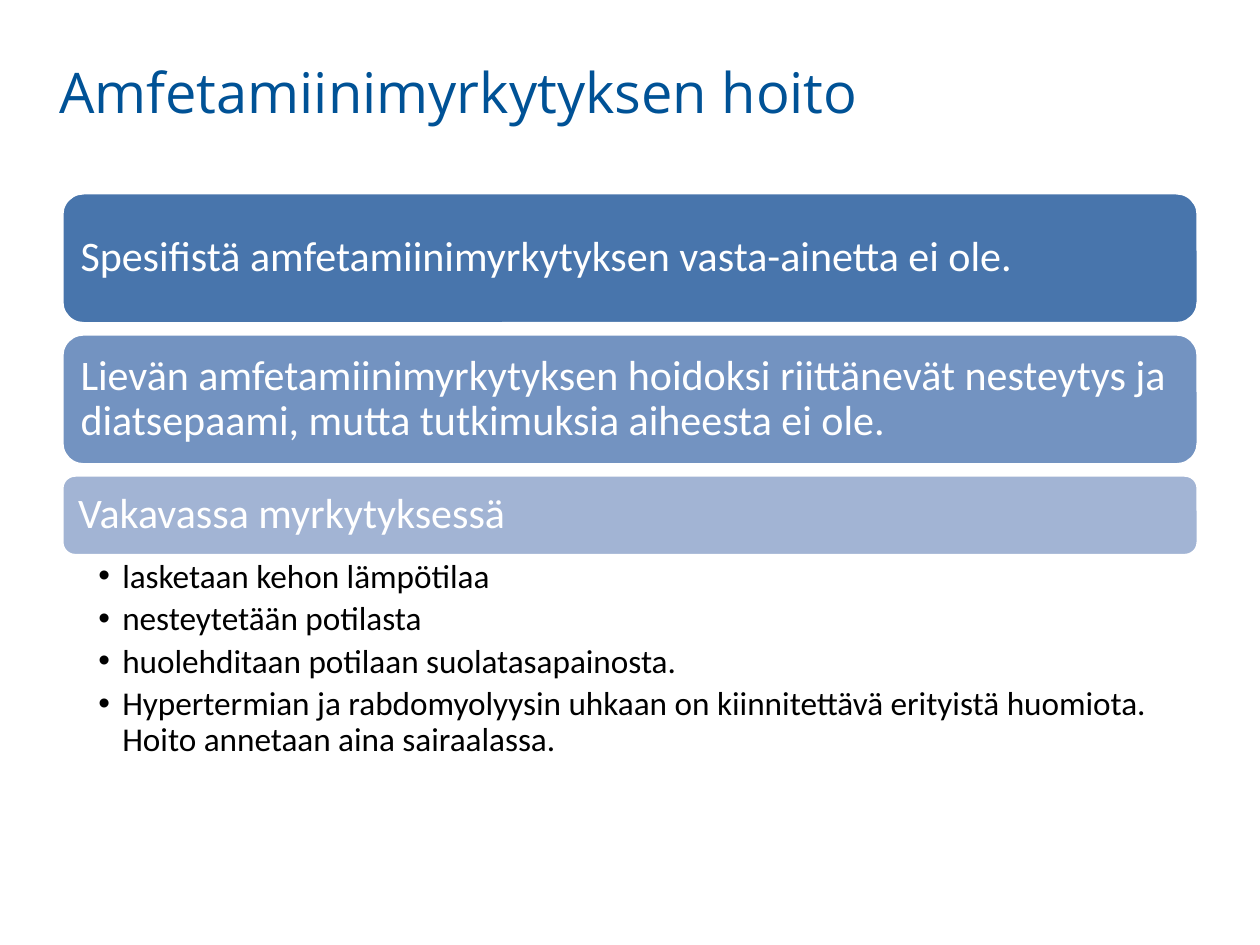
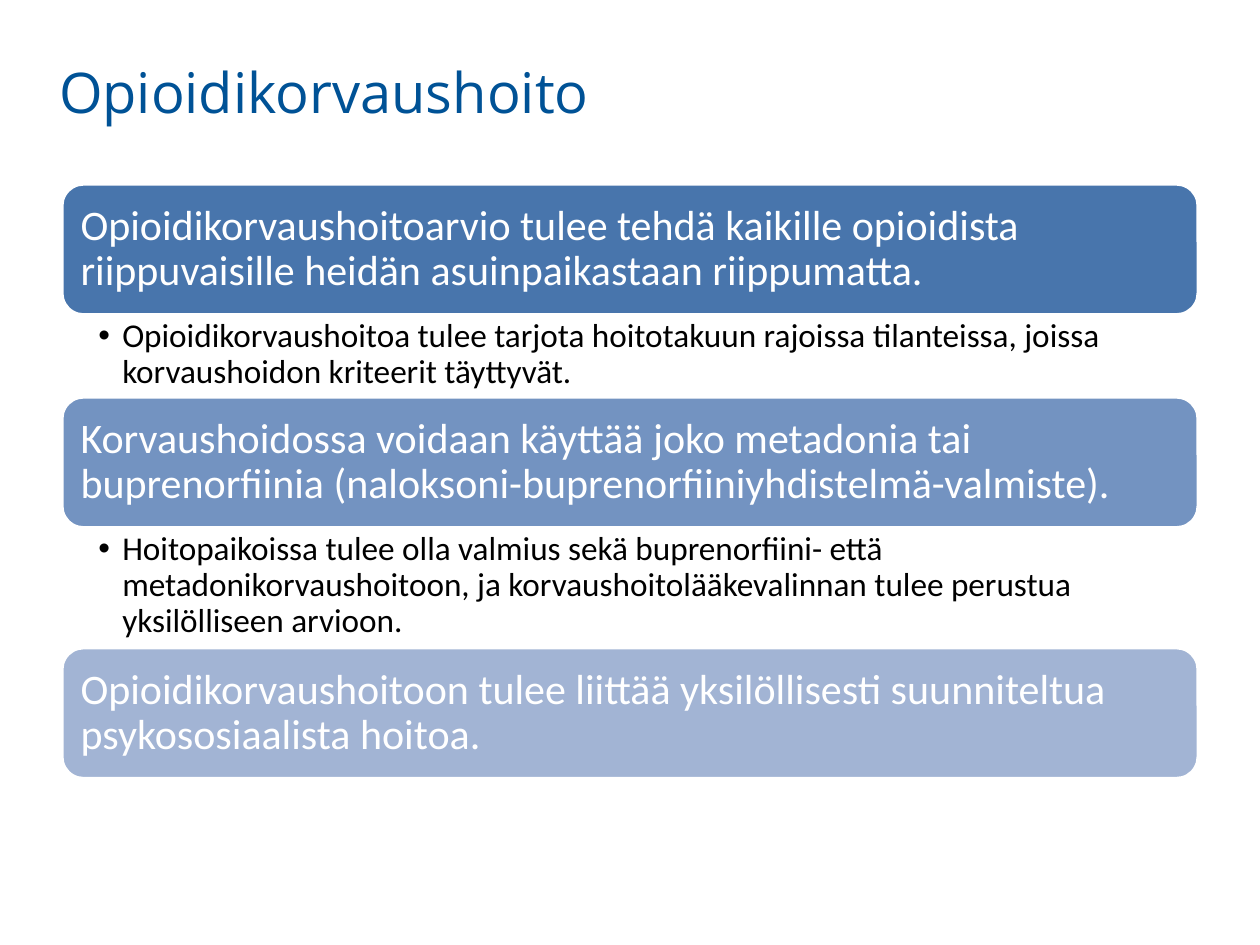
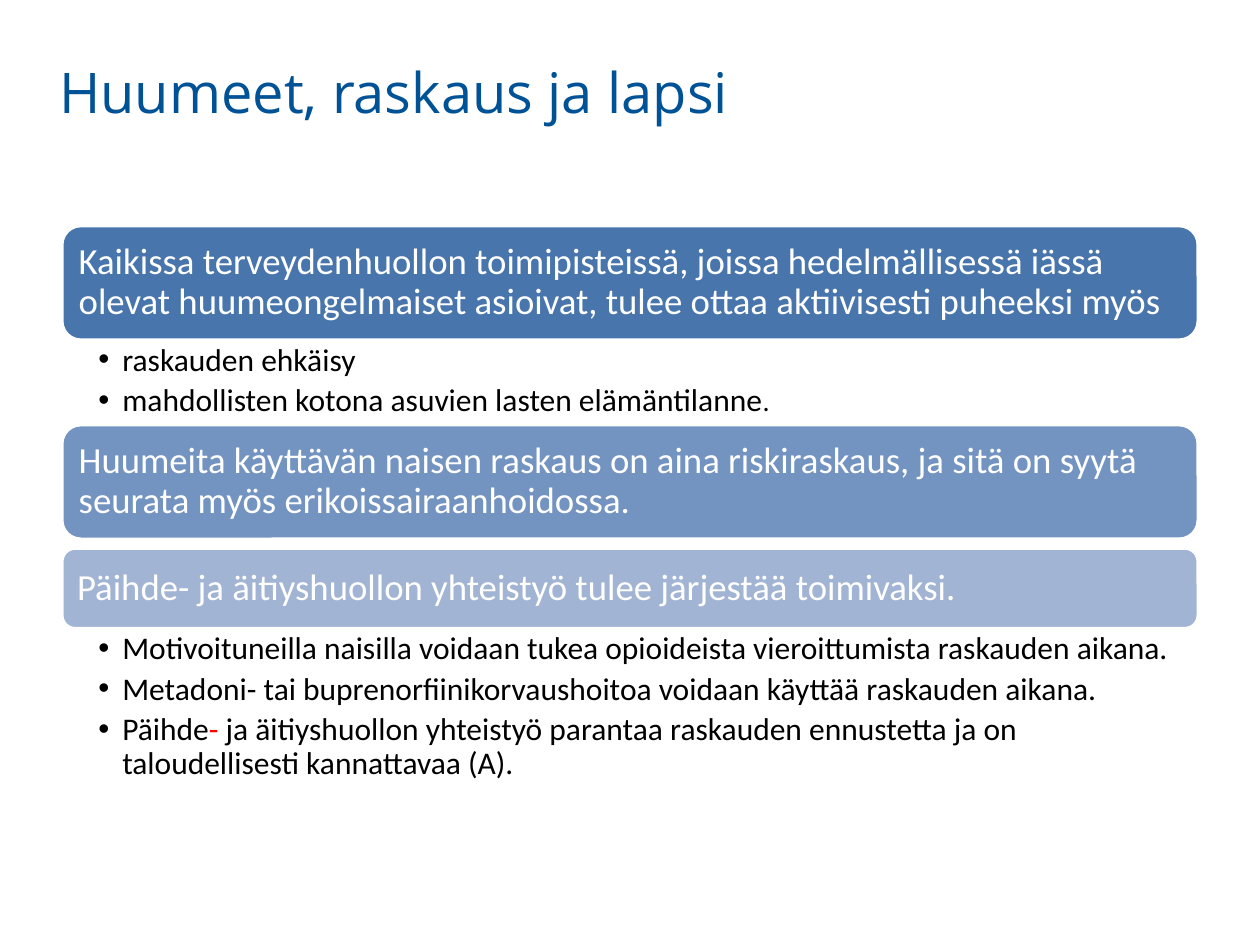
from collections import namedtuple

from lxml import etree
from pptx import Presentation
from pptx.dml.color import RGBColor
from pptx.enum.shapes import MSO_SHAPE
from pptx.enum.text import MSO_ANCHOR, PP_ALIGN
from pptx.oxml.ns import qn
from pptx.util import Inches, Pt

ROUNDED = MSO_SHAPE.ROUNDED_RECTANGLE
MIDDLE = MSO_ANCHOR.MIDDLE
LEFT = PP_ALIGN.LEFT

TITLE_BLUE = RGBColor(0x00, 0x52, 0x96)
WHITE = RGBColor(0xFF, 0xFF, 0xFF)
BLACK = RGBColor(0x00, 0x00, 0x00)
RED = RGBColor(0xFF, 0x00, 0x00)
HEADING_FILLS = (
    RGBColor(0x48, 0x75, 0xAC),
    RGBColor(0x73, 0x93, 0xC1),
    RGBColor(0xA2, 0xB4, 0xD4),
)
TITLE_FONT, BODY_FONT = "Open Sans", "Calibri"
LIST_LEFT, LIST_WIDTH = 0.49, 9.02
BULLET_INDENT = 0.19

# Sizes are in points; heights, gaps and insets are in inches.
Style = namedtuple("Style", "heading_size bullet_size heading_inset right_inset gap")
Block = namedtuple("Block", "heading height bullets bullets_height", defaults=((), 0))
Piece = namedtuple("Piece", "text color size", defaults=(BLACK, None))

LARGE = Style(24, 19, 0.1, 0.19, 0.08)
SMALL = Style(21, 18, 0.09, 0.14, 0.07)

SLIDES = [
    ("Amfetamiinimyrkytyksen hoito", 1.53, LARGE, [
        Block("Spesifistä amfetamiinimyrkytyksen vasta-ainetta ei ole.", 1.04),
        Block("Lievän amfetamiinimyrkytyksen hoidoksi riittänevät nesteytys ja "
              "diatsepaami, mutta tutkimuksia aiheesta ei ole.", 1.04),
        Block("Vakavassa myrkytyksessä", 0.64, [
            "lasketaan kehon lämpötilaa",
            "nesteytetään potilasta",
            "huolehditaan potilaan suolatasapainosta.",
            "Hypertermian ja rabdomyolyysin uhkaan on kiinnitettävä erityistä "
            "huomiota. Hoito annetaan aina sairaalassa.",
        ], 1.71),
    ]),
    ("Opioidikorvaushoito", 1.46, LARGE, [
        Block("Opioidikorvaushoitoarvio tulee tehdä kaikille opioidista "
              "riippuvaisille heidän asuinpaikastaan riippumatta.", 1.04, [
                  "Opioidikorvaushoitoa tulee tarjota hoitotakuun rajoissa tilanteissa, "
                  "joissa korvaushoidon kriteerit täyttyvät.",
              ], 0.65),
        Block("Korvaushoidossa voidaan käyttää joko metadonia tai buprenorfiinia "
              "(naloksoni-buprenorfiiniyhdistelmä-valmiste).", 1.04, [
                  "Hoitopaikoissa tulee olla valmius sekä buprenorfiini- että "
                  "metadonikorvaushoitoon, ja korvaushoitolääkevalinnan tulee "
                  "perustua yksilölliseen arvioon.",
              ], 0.95),
        Block("Opioidikorvaushoitoon tulee liittää yksilöllisesti suunniteltua "
              "psykososiaalista hoitoa.", 1.04),
    ]),
    ("Huumeet, raskaus ja lapsi", 1.79, SMALL, [
        Block("Kaikissa terveydenhuollon toimipisteissä, joissa hedelmällisessä iässä "
              "olevat huumeongelmaiset asioivat, tulee ottaa aktiivisesti puheeksi "
              "myös", 0.91, [
                  "raskauden ehkäisy",
                  [Piece("mahdollisten kotona asuvien lasten elämäntilanne"),
                   Piece(".", size=16)],
              ], 0.67),
        Block("Huumeita käyttävän naisen raskaus on aina riskiraskaus, ja sitä on syytä "
              "seurata myös erikoissairaanhoidossa.", 0.91),
        Block("Päihde- ja äitiyshuollon yhteistyö tulee järjestää toimivaksi.", 0.64, [
            "Motivoituneilla naisilla voidaan tukea opioideista vieroittumista "
            "raskauden aikana.",
            "Metadoni- tai buprenorfiinikorvaushoitoa voidaan käyttää raskauden aikana.",
            [Piece("Päihde"), Piece("- ", RED),
             Piece("ja äitiyshuollon yhteistyö parantaa raskauden ennustetta ja on "
                   "taloudellisesti kannattavaa (A).")],
        ], 1.28),
    ]),
]


def set_insets(frame, left, top, right, bottom):
    frame.word_wrap = True
    frame.margin_left, frame.margin_top = Inches(left), Inches(top)
    frame.margin_right, frame.margin_bottom = Inches(right), Inches(bottom)


def format_run(run, font_name, size, color):
    run.font.name = font_name
    run.font.size = Pt(size)
    run.font.color.rgb = color


def add_title(slide, title):
    box = slide.shapes.add_textbox(Inches(0.37), Inches(0.44), Inches(9.02), Inches(1.26))
    frame = box.text_frame
    set_insets(frame, 0.1, 0.02, 0.1, 0.05)
    frame.text = title
    format_run(frame.paragraphs[0].runs[0], TITLE_FONT, 32, TITLE_BLUE)


def add_heading(slide, top, block, fill, style):
    bar = slide.shapes.add_shape(
        ROUNDED, Inches(LIST_LEFT), Inches(top), Inches(LIST_WIDTH), Inches(block.height))
    bar.shadow.inherit = False
    bar.fill.solid()
    bar.fill.fore_color.rgb = fill
    bar.line.color.rgb = WHITE
    bar.line.width = Pt(2)
    frame = bar.text_frame
    set_insets(frame, *[style.heading_inset] * 4)
    frame.vertical_anchor = MIDDLE
    frame.text = block.heading
    paragraph = frame.paragraphs[0]
    paragraph.alignment = LEFT
    paragraph.line_spacing = 0.9
    format_run(paragraph.runs[0], BODY_FONT, style.heading_size, WHITE)


def make_bullet(paragraph):
    properties = paragraph._p.get_or_add_pPr()
    properties.set("marL", str(Inches(BULLET_INDENT)))
    properties.set("indent", str(-Inches(BULLET_INDENT)))
    etree.SubElement(properties, qn("a:buFont")).set("typeface", "Arial")
    etree.SubElement(properties, qn("a:buChar")).set("char", "•")


def add_bullets(slide, top, block, style):
    box = slide.shapes.add_textbox(
        Inches(LIST_LEFT), Inches(top), Inches(LIST_WIDTH), Inches(block.bullets_height))
    frame = box.text_frame
    set_insets(frame, 0.29, 0.03, style.right_inset, 0.03)
    for index, bullet in enumerate(block.bullets):
        paragraph = frame.add_paragraph() if index else frame.paragraphs[0]
        make_bullet(paragraph)
        paragraph.line_spacing = 0.9
        paragraph.space_after = Pt(0.2 * style.bullet_size)
        pieces = [Piece(bullet)] if isinstance(bullet, str) else bullet
        for piece in pieces:
            run = paragraph.add_run()
            run.text = piece.text
            format_run(run, BODY_FONT, piece.size or style.bullet_size, piece.color)


def add_block_list(slide, top, style, blocks):
    """Stack headings from top, each followed by its bullets or by a gap."""
    for block, fill in zip(blocks, HEADING_FILLS):
        add_heading(slide, top, block, fill, style)
        top += block.height
        if block.bullets:
            add_bullets(slide, top, block, style)
        top += block.bullets_height or style.gap


def main():
    deck = Presentation()
    deck.slide_width, deck.slide_height = Inches(10), Inches(7.5)
    blank = deck.slide_layouts[6]
    for title, top, style, blocks in SLIDES:
        slide = deck.slides.add_slide(blank)
        add_title(slide, title)
        add_block_list(slide, top, style, blocks)
    deck.save("out.pptx")


if __name__ == "__main__":
    main()
